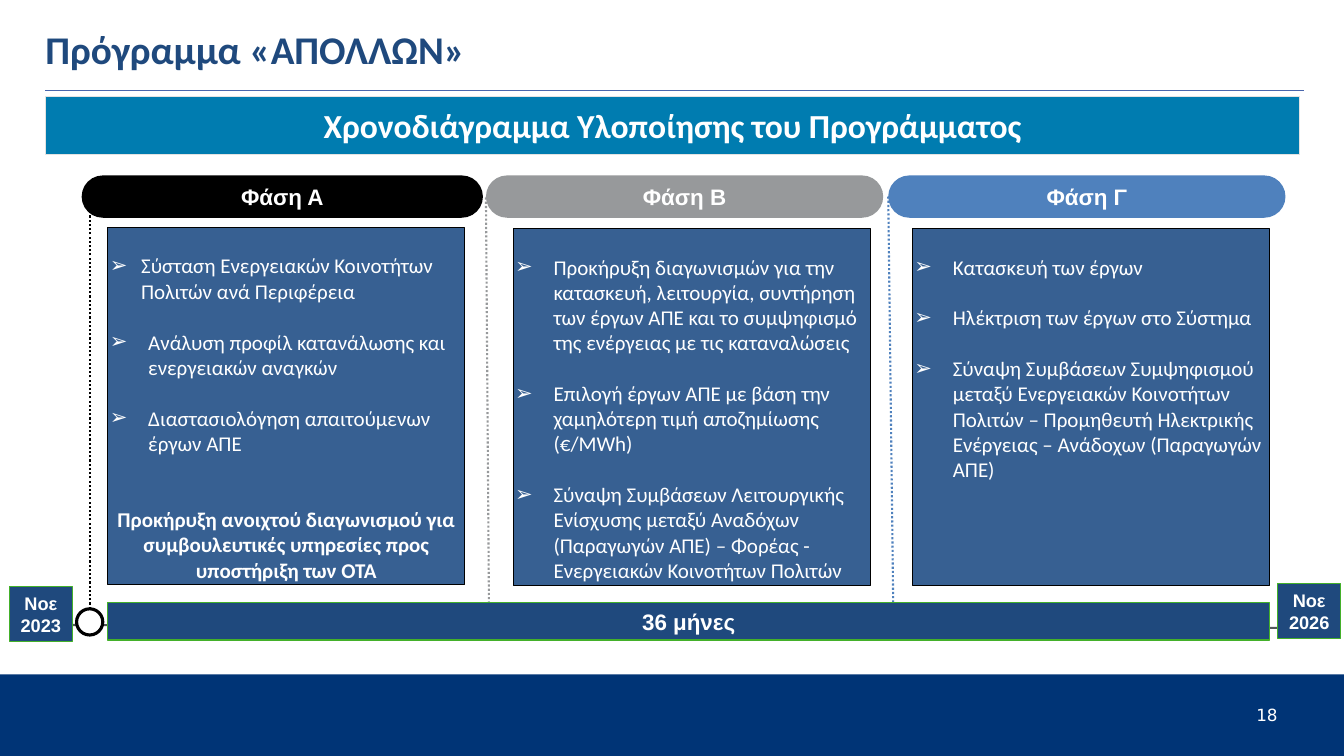
from dataclasses import dataclass

from lxml.etree import SubElement
from pptx import Presentation
from pptx.dml.color import RGBColor
from pptx.enum.dml import MSO_LINE
from pptx.enum.shapes import MSO_CONNECTOR, MSO_SHAPE
from pptx.enum.text import MSO_ANCHOR, MSO_AUTO_SIZE, PP_ALIGN
from pptx.oxml.ns import qn
from pptx.util import Pt

PX = 9144  # EMU per px, 100 px to the inch


@dataclass(frozen=True)
class Theme:
    white: str = "FFFFFF"
    black: str = "000000"
    grey: str = "97999B"
    blue: str = "4F81BD"
    navy: str = "1F497D"
    card: str = "376092"
    banner: str = "007CB0"
    banner_edge: str = "E3E3E2"
    footer: str = "003476"
    rule: str = "4966AC"
    axis: str = "53565A"
    green: str = "43B02A"
    sans: str = "Calibri"
    label: str = "Arial"
    number: str = "DejaVu Sans"
    title_size: int = 28
    banner_size: int = 24
    label_size: int = 16
    list_size: int = 15
    date_size: int = 13
    number_size: int = 12


THEME = Theme()
BLANK_LINE = 18.3  # height of one list line in points

# name, colour, pill left and width, card left and top, divider bottom (x, y)
PHASES = [
    ("Φάση Α", THEME.black, 81, 398, 107, 226, (89, 604)),
    ("Φάση Β", THEME.grey, 482, 394, 509, 227, (485, 607)),
    ("Φάση Γ", THEME.blue, 881, 394, 905, 227, (886, 606)),
]
DIVIDER_TOPS = [89, 482, 881]
TASKS = [
    ["Σύσταση Ενεργειακών Κοινοτήτων Πολιτών ανά Περιφέρεια",
     "Ανάλυση προφίλ κατανάλωσης και ενεργειακών αναγκών",
     "Διαστασιολόγηση απαιτούμενων έργων ΑΠΕ"],
    ["Προκήρυξη διαγωνισμών για την κατασκευή, λειτουργία, συντήρηση των έργων "
     "ΑΠΕ και το συμψηφισμό της ενέργειας με τις καταναλώσεις",
     "Επιλογή έργων ΑΠΕ με βάση την χαμηλότερη τιμή αποζημίωσης (€/MWh)",
     "Σύναψη Συμβάσεων Λειτουργικής Ενίσχυσης μεταξύ Αναδόχων (Παραγωγών ΑΠΕ) "
     "– Φορέας - Ενεργειακών Κοινοτήτων Πολιτών"],
    ["Κατασκευή των έργων",
     "Ηλέκτριση των έργων στο Σύστημα",
     "Σύναψη Συμβάσεων Συμψηφισμού μεταξύ Ενεργειακών Κοινοτήτων Πολιτών – "
     "Προμηθευτή Ηλεκτρικής Ενέργειας – Ανάδοχων (Παραγωγών ΑΠΕ)"],
]
TENDER = ("Προκήρυξη ανοιχτού διαγωνισμού για συμβουλευτικές υπηρεσίες προς "
          "υποστήριξη των ΟΤΑ")


def rgb(colour):
    return RGBColor.from_string(colour)


def place(shape, left, top, width, height):
    shape.left, shape.top = left * PX, top * PX
    shape.width, shape.height = width * PX, height * PX


def set_insets(frame, left=0, top=0, right=0, bottom=0):
    frame.margin_left, frame.margin_top = left * PX, top * PX
    frame.margin_right, frame.margin_bottom = right * PX, bottom * PX


def paint(shape, fill, edge=None, weight=0.75):
    shape.fill.solid()
    shape.fill.fore_color.rgb = rgb(fill)
    if edge:
        shape.line.color.rgb = rgb(edge)
        shape.line.width = Pt(weight)
    else:
        shape.line.fill.background()


def write(paragraph, words, size, font, colour=THEME.white, bold=True,
          align=PP_ALIGN.CENTER):
    paragraph.alignment = align
    run = paragraph.add_run()
    run.text = words
    run.font.size = Pt(size)
    run.font.name = font
    run.font.bold = bold
    run.font.color.rgb = rgb(colour)


def add_block(slide, kind, box, fill, edge=None, weight=0.75):
    block = slide.shapes.add_shape(kind, *(length * PX for length in box))
    block.shadow.inherit = False
    paint(block, fill, edge, weight)
    return block


def add_label(slide, kind, box, fill, words, size, edge=None, font=THEME.label):
    label = add_block(slide, kind, box, fill, edge)
    label.text_frame.word_wrap = True
    write(label.text_frame.paragraphs[0], words, size, font)
    return label


def add_line(slide, start, end, colour, weight, dash=None, oval_ends=False):
    line = slide.shapes.add_connector(
        MSO_CONNECTOR.STRAIGHT, *(length * PX for length in (*start, *end)))
    line.line.color.rgb = rgb(colour)
    line.line.width = Pt(weight)
    if dash:
        line.line.dash_style = dash
    if oval_ends:
        for tag in ("a:headEnd", "a:tailEnd"):
            SubElement(line.line._ln, qn(tag), type="oval")
    SubElement(line._element.spPr, qn("a:effectLst"))


def set_bullet(paragraph, indent):
    """Give a hanging arrow bullet, or none when indent is 0."""
    properties = paragraph._p.get_or_add_pPr()
    properties.set("marL", str(indent * PX))
    properties.set("indent", str(-indent * PX))
    if indent:
        SubElement(properties, qn("a:buFont"), typeface=THEME.label)
        SubElement(properties, qn("a:buChar"), char="➢")
    else:
        SubElement(properties, qn("a:buNone"))


def fill_card(card, left, top, tasks, first_indent=38, closing=None):
    place(card, left, top, 354, 354)
    paint(card, THEME.card, THEME.black)
    frame = card.text_frame
    frame.word_wrap = True
    frame.auto_size = MSO_AUTO_SIZE.NONE
    frame.vertical_anchor = MSO_ANCHOR.TOP
    set_insets(frame, left=2, top=25, right=2)
    for index, task in enumerate(tasks):
        paragraph = frame.add_paragraph() if index else frame.paragraphs[0]
        set_bullet(paragraph, 38 if index else first_indent)
        paragraph.space_before = Pt(BLANK_LINE if index else 0)
        write(paragraph, task, THEME.list_size, THEME.sans, bold=False,
              align=PP_ALIGN.LEFT)
    if closing:
        paragraph = frame.add_paragraph()
        set_bullet(paragraph, 0)
        paragraph.space_before = Pt(2 * BLANK_LINE)
        write(paragraph, closing, THEME.list_size, THEME.sans)


def set_title(title, words):
    place(title, 45, 19, 1244, 58)
    frame = title.text_frame
    frame.auto_size = MSO_AUTO_SIZE.NONE
    frame.vertical_anchor = MSO_ANCHOR.MIDDLE
    set_insets(frame)
    write(frame.paragraphs[0], words, THEME.title_size, THEME.sans, THEME.navy,
          align=PP_ALIGN.LEFT)


def add_page_number(slide, number):
    page = slide.shapes.add_textbox(1242 * PX, 702 * PX, 46 * PX, 14 * PX)
    page.text_frame.word_wrap = True
    set_insets(page.text_frame, left=4)
    paragraph = page.text_frame.paragraphs[0]
    paragraph.line_spacing = 0.87
    write(paragraph, number, THEME.number_size, THEME.number, bold=False,
          align=PP_ALIGN.LEFT)


def add_phases(slide, cards):
    for phase, divider_top, card, tasks in zip(PHASES, DIVIDER_TOPS, cards, TASKS):
        name, colour, left, width, card_left, card_top, divider_end = phase
        pill = add_label(slide, MSO_SHAPE.ROUNDED_RECTANGLE,
                         (left, 174, width, 42), colour, name, THEME.label_size)
        pill.adjustments[0] = 0.5
        add_line(slide, divider_end, (divider_top, 195), colour, 1.5,
                 MSO_LINE.ROUND_DOT)
        opening = card is cards[0]
        fill_card(card, card_left, card_top, tasks, 31 if opening else 38,
                  TENDER if opening else None)


def add_timeline(slide):
    add_line(slide, (62, 620), (1291, 623), THEME.axis, 1.5, oval_ends=True)
    add_block(slide, MSO_SHAPE.OVAL, (76, 604, 26, 26), THEME.white, THEME.black, 2.25)
    for left, top, date in ((9, 582, "Νοε 2023"), (1267, 579, "Νοε 2026")):
        add_label(slide, MSO_SHAPE.RECTANGLE, (left, top, 63, 54), THEME.navy,
                  date, THEME.date_size, THEME.green)
    add_label(slide, MSO_SHAPE.RECTANGLE, (107, 598, 1152, 37), THEME.navy,
              "36 μήνες", THEME.label_size, THEME.green)


def main():
    deck = Presentation()
    deck.slide_width, deck.slide_height = 1333 * PX, 750 * PX
    slide = deck.slides.add_slide(deck.slide_layouts.get_by_name("Comparison"))
    first, second, spare, third = list(slide.placeholders)[1:]
    spare._element.getparent().remove(spare._element)

    set_title(slide.shapes.title, "Πρόγραμμα «ΑΠΟΛΛΩΝ»")
    add_block(slide, MSO_SHAPE.RECTANGLE, (0, 669, 1333, 81), THEME.footer)
    add_line(slide, (45, 90), (1293, 90), THEME.rule, 0.96)
    add_label(slide, MSO_SHAPE.RECTANGLE, (45, 96, 1244, 57), THEME.banner,
              "Χρονοδιάγραμμα Υλοποίησης του Προγράμματος", THEME.banner_size,
              THEME.banner_edge, THEME.sans)
    add_phases(slide, [first, second, third])
    add_timeline(slide)
    add_page_number(slide, "18")
    deck.save("out.pptx")


if __name__ == "__main__":
    main()
